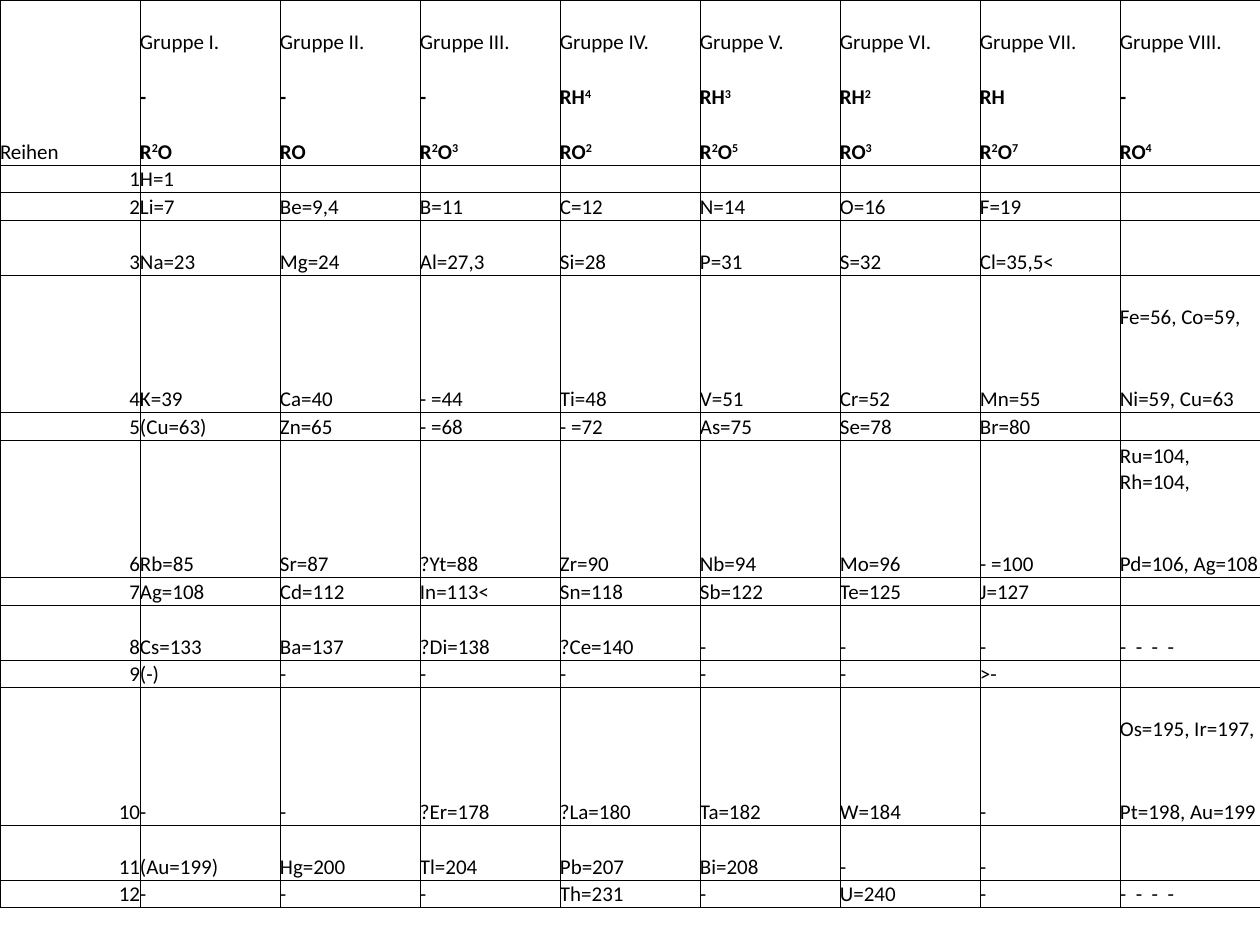
from itertools import groupby

from lxml import etree
from pptx import Presentation
from pptx import util as u
from pptx.dml.color import RGBColor
from pptx.enum import text
from pptx.oxml import ns

EMU_PER_PX = 914400 // 126
SLIDE_WIDTH, SLIDE_HEIGHT = 1260, 945
TABLE_HEIGHT, HEIGHT_UNITS = 908, 33
COLUMNS = 9
FONT, FONT_SIZE = "Calibri", 12
BORDER_EMU = 6350
BLACK = RGBColor(0, 0, 0)

GROUPS = ["I", "II", "III", "IV", "V", "VI", "VII", "VIII"]
HYDRIDES = ["-", "-", "-", "RH4", "RH3", "RH2", "RH", "-"]
OXIDES = ["R2O", "RO", "R2O3", "RO2", "R2O5", "RO3", "R2O7", "RO4"]
HEADER_HEIGHTS = [2, 1, 1, 1, 1]
TRIAD_HEIGHTS = [2, 1, 2]
TALL_SERIES = {3, 8, 11}
DASHES = "\u00a0\u00a0".join("----")

# A pair in the last column marks a series that takes three table rows.
SERIES = [
    ["H=1", "", "", "", "", "", "", ""],
    ["Li=7", "Be=9,4", "B=11", "C=12", "N=14", "O=16", "F=19", ""],
    ["Na=23", "Mg=24", "Al=27,3", "Si=28", "P=31", "S=32", "Cl=35,5<", ""],
    ["K=39", "Ca=40", "- =44", "Ti=48", "V=51", "Cr=52", "Mn=55",
     ("Fe=56, Co=59,", "Ni=59, Cu=63")],
    ["(Cu=63)", "Zn=65", "- =68", "- =72", "As=75", "Se=78", "Br=80", ""],
    ["Rb=85", "Sr=87", "?Yt=88", "Zr=90", "Nb=94", "Mo=96", "- =100",
     ("Ru=104, Rh=104,", "Pd=106, Ag=108")],
    ["Ag=108", "Cd=112", "In=113<", "Sn=118", "Sb=122", "Te=125", "J=127", ""],
    ["Cs=133", "Ba=137", "?Di=138", "?Ce=140", "-", "-", "-", DASHES],
    ["(-)", "-", "-", "-", "-", "-", ">-", ""],
    ["-", "-", "?Er=178", "?La=180", "Ta=182", "W=184", "-",
     ("Os=195, Ir=197,", "Pt=198, Au=199")],
    ["(Au=199)", "Hg=200", "Tl=204", "Pb=207", "Bi=208", "-", "-", ""],
    ["-", "-", "-", "Th=231", "-", "U=240", "-", DASHES],
]


def px(length):
    return u.Emu(length * EMU_PER_PX)


def series_heights(number, values):
    """Row heights of one series, in units of a single line."""
    if isinstance(values[-1], tuple):
        return TRIAD_HEIGHTS
    return [2 if number in TALL_SERIES else 1]


def set_borders(cell, top, bottom):
    properties = cell._tc.get_or_add_tcPr()
    for side, shown in (("L", True), ("R", True), ("T", top), ("B", bottom)):
        line = etree.SubElement(properties, ns.qn(f"a:ln{side}"), w=str(BORDER_EMU))
        if shown:
            fill = etree.SubElement(line, ns.qn("a:solidFill"))
            etree.SubElement(fill, ns.qn("a:srgbClr"), val=str(BLACK))
        else:
            etree.SubElement(line, ns.qn("a:noFill"))


def format_cell(cell, top=True, bottom=True):
    set_borders(cell, top, bottom)
    cell.fill.background()
    cell.margin_left = cell.margin_right = cell.margin_top = cell.margin_bottom = 0
    cell.vertical_anchor = text.MSO_ANCHOR.BOTTOM
    end = cell.text_frame.paragraphs[0]._p.get_or_add_endParaRPr()
    end.set("sz", str(FONT_SIZE * 100))


def format_run(run, bold=False):
    run.font.name, run.font.size = FONT, u.Pt(FONT_SIZE)
    run.font.bold = bold
    run.font.color.rgb = BLACK


def write(cell, content, align=text.PP_ALIGN.LEFT):
    if not content:
        return
    paragraph = cell.text_frame.paragraphs[0]
    paragraph.text = content.replace("- =", "-\u00a0=")
    paragraph.alignment = align
    format_run(paragraph.runs[0])


def write_formula(cell, formula):
    """Write a bold formula whose digits are superscript."""
    paragraph = cell.text_frame.paragraphs[0]
    for is_digit, letters in groupby(formula, str.isdigit):
        run = paragraph.add_run()
        run.text = "".join(letters)
        format_run(run, bold=True)
        if is_digit:
            run._r.get_or_add_rPr().set("baseline", "30000")


def format_block(table, first, count, merged_columns):
    """Frame a block of rows; merge the given columns over its height."""
    last = first + count - 1
    for column in range(COLUMNS):
        merged = count > 1 and column in merged_columns
        for row in range(first, last + 1):
            origin = merged and row == first
            format_cell(table.cell(row, column), row == first, row == last or origin)
        if merged:
            table.cell(first, column).merge(table.cell(last, column))


def fill_header(table):
    count = len(HEADER_HEIGHTS)
    format_block(table, 0, count, {0})
    write(table.cell(0, 0), "Reihen")
    for column, (group, hydride, oxide) in enumerate(zip(GROUPS, HYDRIDES, OXIDES), 1):
        write(table.cell(0, column), f"Gruppe {group}.")
        write_formula(table.cell(2, column), hydride)
        write_formula(table.cell(4, column), oxide)


def fill_series(table, first, number, values):
    count = len(series_heights(number, values))
    format_block(table, first, count, range(COLUMNS - 1))
    write(table.cell(first, 0), str(number), text.PP_ALIGN.RIGHT)
    for column, value in enumerate(values, 1):
        if isinstance(value, tuple):
            upper, lower = value
            write(table.cell(first, column), upper)
            write(table.cell(first + count - 1, column), lower)
        else:
            write(table.cell(first, column), value)
    return first + count


def add_periodic_table(slide):
    heights = list(HEADER_HEIGHTS)
    for number, values in enumerate(SERIES, 1):
        heights += series_heights(number, values)
    table = slide.shapes.add_table(
        len(heights), COLUMNS, 0, 0, px(SLIDE_WIDTH), px(TABLE_HEIGHT)).table
    table.first_row = table.horz_banding = False
    for row, height in zip(table.rows, heights):
        row.height = px(TABLE_HEIGHT) * height // HEIGHT_UNITS
    fill_header(table)
    next_row = len(HEADER_HEIGHTS)
    for number, values in enumerate(SERIES, 1):
        next_row = fill_series(table, next_row, number, values)


def main():
    presentation = Presentation()
    presentation.slide_width = px(SLIDE_WIDTH)
    presentation.slide_height = px(SLIDE_HEIGHT)
    slide = presentation.slides.add_slide(presentation.slide_layouts[6])
    add_periodic_table(slide)
    presentation.save("out.pptx")


if __name__ == "__main__":
    main()
